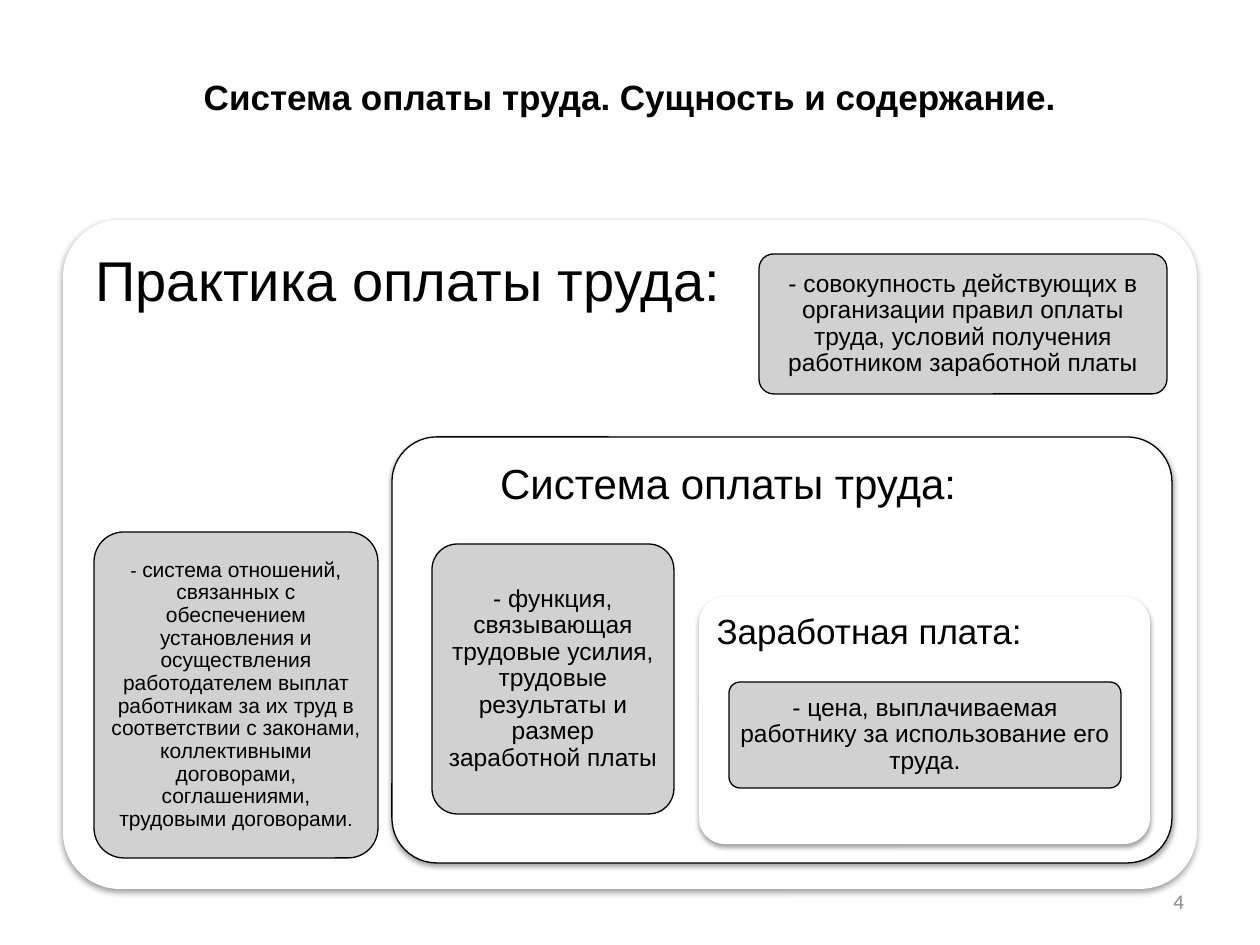
from lxml.etree import SubElement
from pptx import Presentation
from pptx.dml.color import RGBColor
from pptx.enum.shapes import MSO_SHAPE
from pptx.enum.text import MSO_ANCHOR, PP_ALIGN
from pptx.oxml.ns import qn
from pptx.util import Emu, Pt

COLORS = {"text": "000000", "line": "000000", "panel": "FFFFFF",
          "card": "CCCCCC", "number": "8C8C8C"}
PX_PER_INCH = 126


def px(value):
    return Emu(round(value * 914400 / PX_PER_INCH))


def color(name):
    return RGBColor.from_string(COLORS[name])


class SlideBuilder:
    def __init__(self, presentation):
        self.slide = presentation.slides.add_slide(presentation.slide_layouts[6])
        self.font = "Arial"

    def add_text(self, shape, runs, align, anchor, insets, spacing=1.0,
                 bold=False, font=None, ink="text"):
        frame = shape.text_frame
        frame.word_wrap = True
        frame.vertical_anchor = anchor
        frame.margin_left, frame.margin_top, frame.margin_right, frame.margin_bottom = map(px, insets)
        paragraph = frame.paragraphs[0]
        paragraph.alignment = align
        paragraph.line_spacing = spacing
        for text, size in runs:
            run = paragraph.add_run()
            run.text = text
            run.font.size = Pt(size)
            run.font.bold = bold
            run.font.name = font or self.font
            run.font.color.rgb = color(ink)

    def label(self, box, text, size, align, **style):
        shape = self.slide.shapes.add_textbox(*map(px, box))
        self.add_text(shape, [(text, size)], align, MSO_ANCHOR.MIDDLE, (13, 6, 13, 6), **style)

    def rounded(self, box, fill, outlined, radius):
        shape = self.slide.shapes.add_shape(MSO_SHAPE.ROUNDED_RECTANGLE, *map(px, box))
        shape.adjustments[0] = radius
        shape.shadow.inherit = False
        shape.fill.solid()
        shape.fill.fore_color.rgb = color(fill)
        if outlined:
            shape.line.color.rgb = color("line")
            shape.line.width = Pt(0.75)
        else:
            shape.line.fill.background()
        return shape

    def panel(self, box, heading, size, inset, indent=0, outlined=False, radius=0.105):
        shape = self.rounded(box, "panel", outlined, radius)
        effects = shape.element.spPr.find(qn("a:effectLst"))
        shadow = SubElement(effects, qn("a:outerShdw"), blurRad=str(Pt(3.1)),
                            dist=str(Pt(1.6)), dir="5400000", rotWithShape="0")
        shade = SubElement(shadow, qn("a:srgbClr"), val=COLORS["line"])
        SubElement(shade, qn("a:alpha"), val="38000")
        self.add_text(shape, [(heading, size)], PP_ALIGN.LEFT, MSO_ANCHOR.TOP,
                      (inset + indent, inset, inset, inset), spacing=0.9)

    def card(self, box, runs, inset=8):
        shape = self.rounded(box, "card", True, 0.105)
        fill = shape.element.spPr.find(qn("a:solidFill"))
        SubElement(fill[0], qn("a:alpha"), val="90000")
        self.add_text(shape, runs, PP_ALIGN.CENTER, MSO_ANCHOR.MIDDLE, (inset,) * 4, spacing=0.9)


def main():
    presentation = Presentation()
    presentation.slide_width, presentation.slide_height = px(1260), px(945)
    builder = SlideBuilder(presentation)

    builder.label((63, 38, 1134, 117), "Система оплаты труда. Сущность и содержание.",
                  20, PP_ALIGN.CENTER, bold=True)

    builder.panel((63, 220, 1134, 669), "Практика оплаты труда:", 32, 16, radius=0.085)
    builder.card((759, 254, 408, 140), [
        ("- совокупность действующих в организации правил оплаты труда, "
         "условий получения работником заработной платы", 14)])
    builder.card((94, 532, 284, 326), [
        ("- ", 11),
        ("система отношений, связанных с обеспечением установления и осуществления "
         "работодателем выплат работникам за их труд в соответствии с законами, "
         "коллективными договорами, соглашениями, трудовыми договорами", 12),
        (".", 11)], inset=6)

    builder.panel((392, 437, 780, 426), "Система оплаты труда:", 24, 13,
                  indent=82, outlined=True)
    builder.card((432, 544, 242, 270), [
        ("- функция, связывающая трудовые усилия, трудовые результаты "
         "и размер заработной платы", 14)])

    builder.panel((699, 597, 451, 247), "Заработная плата:", 20, 10)
    builder.card((729, 682, 392, 106), [
        ("- цена, выплачиваемая работнику за использование его труда.", 14)])

    builder.label((903, 876, 294, 50), "4", 12, PP_ALIGN.RIGHT, font="Calibri", ink="number")
    presentation.save("out.pptx")


if __name__ == "__main__":
    main()
